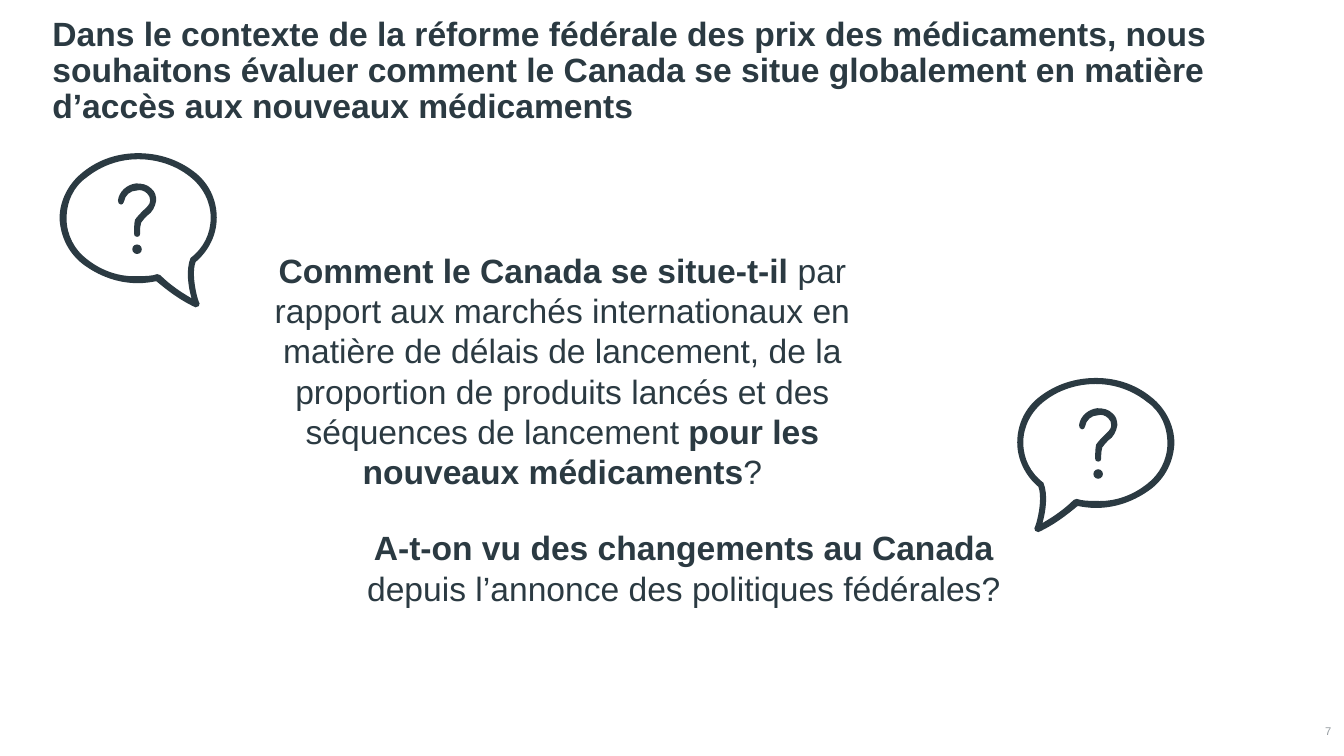
from dataclasses import dataclass

import lxml.etree
import pptx
import pptx.dml.color
import pptx.enum.shapes
import pptx.enum.text
import pptx.oxml.ns
import pptx.util

Pt = pptx.util.Pt
ALIGN = pptx.enum.text.PP_ALIGN
ANCHOR = pptx.enum.text.MSO_ANCHOR
AUTO_SIZE = pptx.enum.text.MSO_AUTO_SIZE
qn = pptx.oxml.ns.qn
Point = tuple[float, float]
Contour = tuple[Point, list[tuple[float, ...]]]


@dataclass(frozen=True)
class Theme:
    font: str = "Arial"
    ink: str = "2B3A42"
    muted: str = "959CA0"
    text_size: float = 24
    number_size: float = 8


@dataclass(frozen=True)
class Span:
    text: str
    bold: bool = False


@dataclass(frozen=True)
class Question:
    left: float
    top: float
    width: float
    height: float
    spans: tuple[Span, ...]


@dataclass(frozen=True)
class Bubble:
    center: float
    top: float
    mark_center: float
    direction: int  # 1: tail on the right, -1: tail on the left


THEME = Theme()
GRID = 0.72  # points per unit of the icon outlines

# Each contour is a start point and cubic curves (two controls, then the end).
BUBBLE_OUTLINE: list[Contour] = [
    ((57, 153), [
        (42, 146, 30, 137, 18, 127), (13, 128, 6, 129, 0, 129),
        (-20, 129, -39, 122, -55, 110), (-69, 99, -77, 83, -78, 65),
        (-78, 47, -69, 30, -55, 19), (-39, 6, -20, 0, 0, 0),
        (20, 0, 39, 6, 55, 18), (70, 29, 78, 46, 78, 64),
        (78, 81, 70, 97, 57, 108), (52, 122, 60, 149, 61, 149),
        (61, 151, 60, 153, 57, 153),
    ]),
    ((19, 120), [
        (20, 120, 21, 121, 22, 121), (31, 130, 41, 137, 53, 144),
        (50, 134, 47, 116, 52, 104), (65, 94, 72, 80, 72, 64),
        (72, 48, 64, 33, 51, 23), (37, 12, 19, 6, 0, 6),
        (-18, 6, -36, 12, -51, 24), (-64, 33, -71, 48, -71, 65),
        (-71, 81, -63, 96, -51, 105), (-36, 117, -18, 123, 0, 122),
        (7, 122, 13, 122, 19, 120),
    ]),
]
HOOK_OUTLINE: list[Contour] = [
    ((0, 53), [
        (-2, 53, -3, 52, -3, 50), (-3, 45, -3, 40, -2, 36),
        (0, 33, 3, 30, 6, 27), (9, 24, 13, 21, 13, 17),
        (13, 14, 12, 12, 10, 10), (7, 7, 3, 6, 0, 7),
        (-7, 7, -12, 12, -13, 18), (-13, 20, -15, 21, -16, 21),
        (-18, 21, -19, 19, -19, 17), (-18, 8, -10, 1, -1, 0),
        (5, 0, 10, 1, 14, 5), (18, 8, 19, 13, 19, 17),
        (18, 23, 15, 29, 10, 32), (8, 34, 6, 36, 4, 39),
        (3, 42, 3, 45, 3, 50), (3, 52, 2, 53, 0, 53),
    ]),
]
HOOK_DROP = 21.6
DOT_DROP = 65.2
DOT_SIZE = 6.8

TITLE = (
    "Dans le contexte de la réforme fédérale des prix des médicaments, nous "
    "souhaitons évaluer comment le Canada se situe globalement en matière "
    "d’accès aux nouveaux médicaments"
)
QUESTIONS = [
    Question(161.7, 174.7, 480, 181.4, (
        Span("Comment le Canada se situe-t-il ", True),
        Span("par rapport aux marchés internationaux en matière de délais de "
             "lancement, de la proportion de produits lancés et des séquences "
             "de lancement "),
        Span("pour les nouveaux médicaments", True),
        Span("?"),
    )),
    Question(248.4, 373, 480, 65.5, (
        Span("A-t-on vu des changements au Canada ", True),
        Span("depuis l’annonce des politiques fédérales?"),
    )),
]
BUBBLES = [
    Bubble(98.7, 109.44, 97.92, 1),
    Bubble(782.8, 270, 784.44, -1),
]


def add_span(paragraph, span: Span, size: float = THEME.text_size,
             color: str = THEME.ink) -> None:
    run = paragraph.add_run()
    run.text = span.text
    run.font.name = THEME.font
    run.font.size = Pt(size)
    run.font.bold = span.bold
    run.font.color.rgb = pptx.dml.color.RGBColor.from_string(color)


def fill_with_ink(shape) -> None:
    shape.shadow.inherit = False
    shape.fill.solid()
    shape.fill.fore_color.rgb = pptx.dml.color.RGBColor.from_string(THEME.ink)
    shape.line.fill.background()


def bend_segments(shape, curves: list[list[Point]]) -> None:
    """Turn each straight segment of a freeform into its cubic curve."""
    segments = list(shape.element.iter(qn("a:lnTo")))
    for segment, points in zip(segments, curves, strict=True):
        curve = lxml.etree.Element(qn("a:cubicBezTo"))
        for x, y in points:
            lxml.etree.SubElement(curve, qn("a:pt"), x=str(x - shape.left),
                                  y=str(y - shape.top))
        segment.getparent().replace(segment, curve)


def draw_outline(slide, outline: list[Contour], center: float, top: float,
                 direction: int = 1) -> None:
    def place(x: float, y: float) -> Point:
        return Pt(center + direction * GRID * x), Pt(top + GRID * y)

    builder = slide.shapes.build_freeform(*place(*outline[0][0]), scale=1.0)
    placed_curves = []
    for index, (start, curves) in enumerate(outline):
        placed = [[place(*curve[i:i + 2]) for i in (0, 2, 4)]
                  for curve in curves]
        if index:
            builder.move_to(*place(*start))
        builder.add_line_segments([points[-1] for points in placed])
        placed_curves += placed
    shape = builder.convert_to_shape()
    bend_segments(shape, placed_curves)
    fill_with_ink(shape)


def draw_bubble(slide, bubble: Bubble) -> None:
    draw_outline(slide, BUBBLE_OUTLINE, bubble.center, bubble.top,
                 bubble.direction)
    draw_outline(slide, HOOK_OUTLINE, bubble.mark_center,
                 bubble.top + HOOK_DROP)
    dot = slide.shapes.add_shape(
        pptx.enum.shapes.MSO_SHAPE.OVAL,
        Pt(bubble.mark_center - DOT_SIZE / 2), Pt(bubble.top + DOT_DROP),
        Pt(DOT_SIZE), Pt(DOT_SIZE))
    fill_with_ink(dot)


def draw_title(slide) -> None:
    title = slide.shapes.title
    title.left, title.top = Pt(30.24), Pt(33.12)
    title.width, title.height = Pt(892.8), Pt(60.5)
    frame = title.text_frame
    frame.auto_size = AUTO_SIZE.NONE
    frame.word_wrap = True
    frame.vertical_anchor = ANCHOR.BOTTOM
    heading = frame.paragraphs[0]
    heading.alignment = ALIGN.LEFT
    heading.line_spacing = 0.9
    add_span(heading, Span(TITLE, True))


def draw_question(slide, question: Question) -> None:
    frame = slide.shapes.add_textbox(
        Pt(question.left), Pt(question.top),
        Pt(question.width), Pt(question.height)).text_frame
    frame.word_wrap = True
    frame.auto_size = AUTO_SIZE.SHAPE_TO_FIT_TEXT
    frame.paragraphs[0].alignment = ALIGN.CENTER
    for span in question.spans:
        add_span(frame.paragraphs[0], span)


def draw_page_number(slide) -> None:
    frame = slide.shapes.add_textbox(
        Pt(923), Pt(515.5), Pt(28), Pt(13.7)).text_frame
    frame.margin_left = frame.margin_right = Pt(0)
    frame.margin_top = frame.margin_bottom = Pt(0)
    frame.word_wrap = True
    frame.vertical_anchor = ANCHOR.MIDDLE
    frame.paragraphs[0].alignment = ALIGN.RIGHT
    add_span(frame.paragraphs[0], Span("7"), THEME.number_size, THEME.muted)


def main() -> None:
    deck = pptx.Presentation()
    deck.slide_width, deck.slide_height = Pt(960), Pt(540)
    slide = deck.slides.add_slide(deck.slide_layouts[5])
    draw_page_number(slide)
    draw_title(slide)
    for bubble in BUBBLES:
        draw_bubble(slide, bubble)
    for question in QUESTIONS:
        draw_question(slide, question)
    deck.save("out.pptx")


if __name__ == "__main__":
    main()
